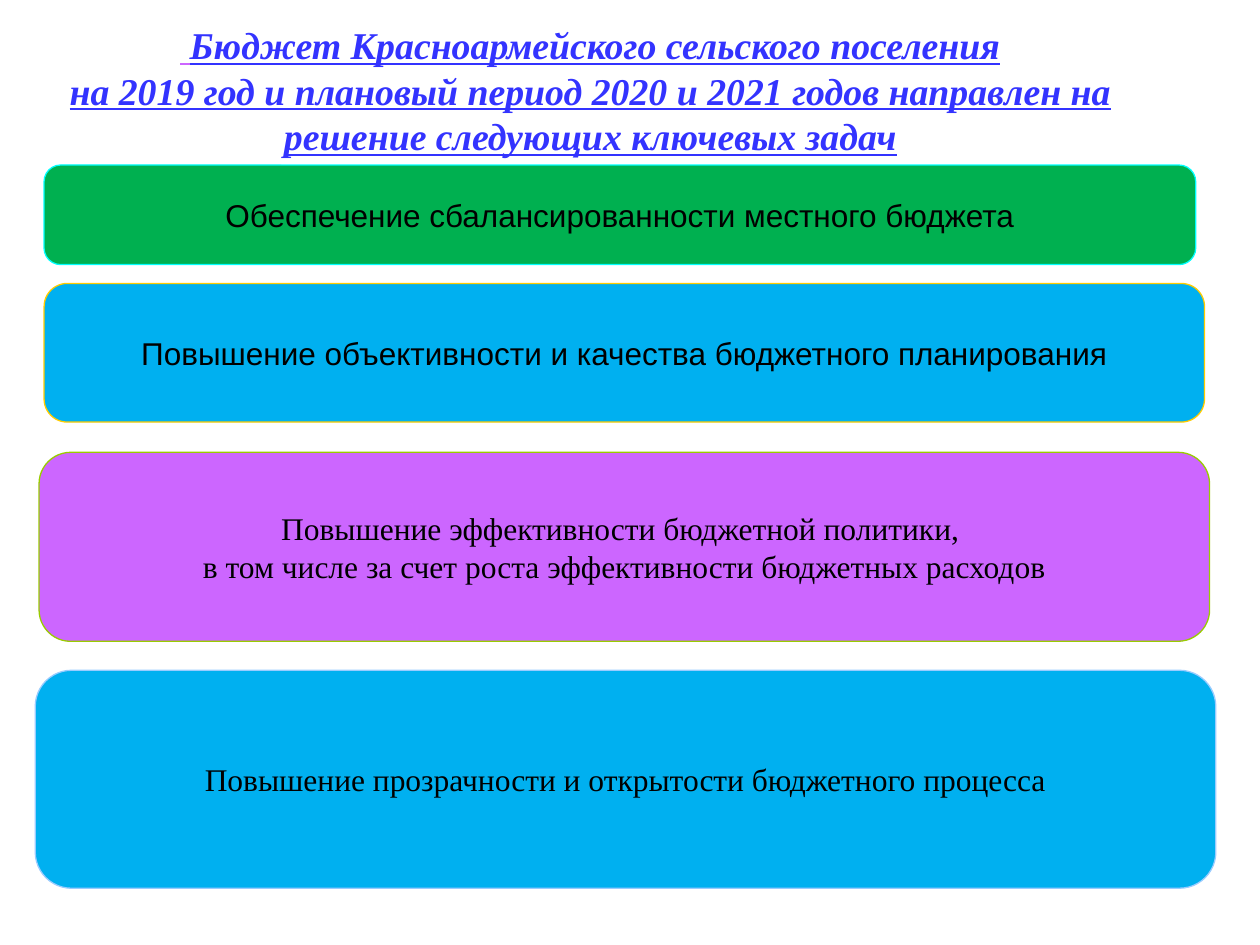
from pptx import Presentation
from pptx.dml.color import RGBColor
from pptx.enum import shapes, text
from pptx.util import Inches, Pt

BLACK = RGBColor(0x00, 0x00, 0x00)
BLUE = RGBColor(0x33, 0x33, 0xFF)
GREEN = RGBColor(0x00, 0xB0, 0x50)
SKY = RGBColor(0x00, 0xB0, 0xF0)
VIOLET = RGBColor(0xCC, 0x66, 0xFF)
CYAN = RGBColor(0x00, 0xFF, 0xFF)
GOLD = RGBColor(0xFF, 0xCC, 0x00)
LIME = RGBColor(0x99, 0xCC, 0x00)
PALE_BLUE = RGBColor(0x99, 0xCC, 0xFF)
SERIF = "Times New Roman"
SANS = "Arial"


def add_text(p, content, font=SERIF, size=18, color=BLACK, emphasis=None):
    p.alignment = text.PP_ALIGN.CENTER
    for i, line in enumerate(content.split("\n")):
        if i:
            p.add_line_break()
        r = p.add_run()
        r.text = line
        r.font.name = font
        r.font.size = Pt(size)
        r.font.color.rgb = color
        r.font.bold = r.font.italic = r.font.underline = emphasis


prs = Presentation()
prs.slide_width, prs.slide_height = Inches(10), Inches(7.5)
s = prs.slides.add_slide(prs.slide_layouts[5])

title = s.shapes.title
title.left, title.top = Inches(0), Inches(0.28)
title.width, title.height = Inches(9.37), Inches(0.87)
tf = title.text_frame
tf.word_wrap = True
tf.auto_size = text.MSO_AUTO_SIZE.NONE
tf.vertical_anchor = text.MSO_ANCHOR.MIDDLE
heading = ("Бюджет Красноармейского сельского поселения\n"
           "на 2019 год и плановый период 2020 и 2021 годов "
           "направлен на решение следующих ключевых задач")
for content, color in [(" ", VIOLET), (heading, BLUE)]:
    add_text(tf.paragraphs[0], content, size=21.6, color=color, emphasis=True)

tasks = [
    (0.35, 1.31, 9.14, 0.79, GREEN, CYAN, SANS,
     ["Обеспечение сбалансированности местного бюджета"]),
    (0.35, 2.25, 9.21, 1.1, SKY, GOLD, SANS,
     ["Повышение объективности и качества бюджетного планирования"]),
    (0.31, 3.59, 9.29, 1.5, VIOLET, LIME, SERIF,
     ["Повышение эффективности бюджетной политики, ",
      "в том числе за счет роста эффективности бюджетных расходов"]),
    (0.28, 5.32, 9.37, 1.73, SKY, PALE_BLUE, SERIF,
     ["Повышение прозрачности и открытости бюджетного процесса"]),
]
for left, top, width, height, fill, line, font, lines in tasks:
    sp = s.shapes.add_shape(shapes.MSO_SHAPE.ROUNDED_RECTANGLE, Inches(left),
                            Inches(top), Inches(width), Inches(height))
    sp.shadow.inherit = False
    sp.fill.solid()
    sp.fill.fore_color.rgb = fill
    sp.line.color.rgb = line
    sp.line.width = Pt(0.75)
    tf = sp.text_frame
    tf.word_wrap = False
    tf.vertical_anchor = text.MSO_ANCHOR.MIDDLE
    for i, content in enumerate(lines):
        p = tf.add_paragraph() if i else tf.paragraphs[0]
        add_text(p, content, font=font)

prs.save("out.pptx")
